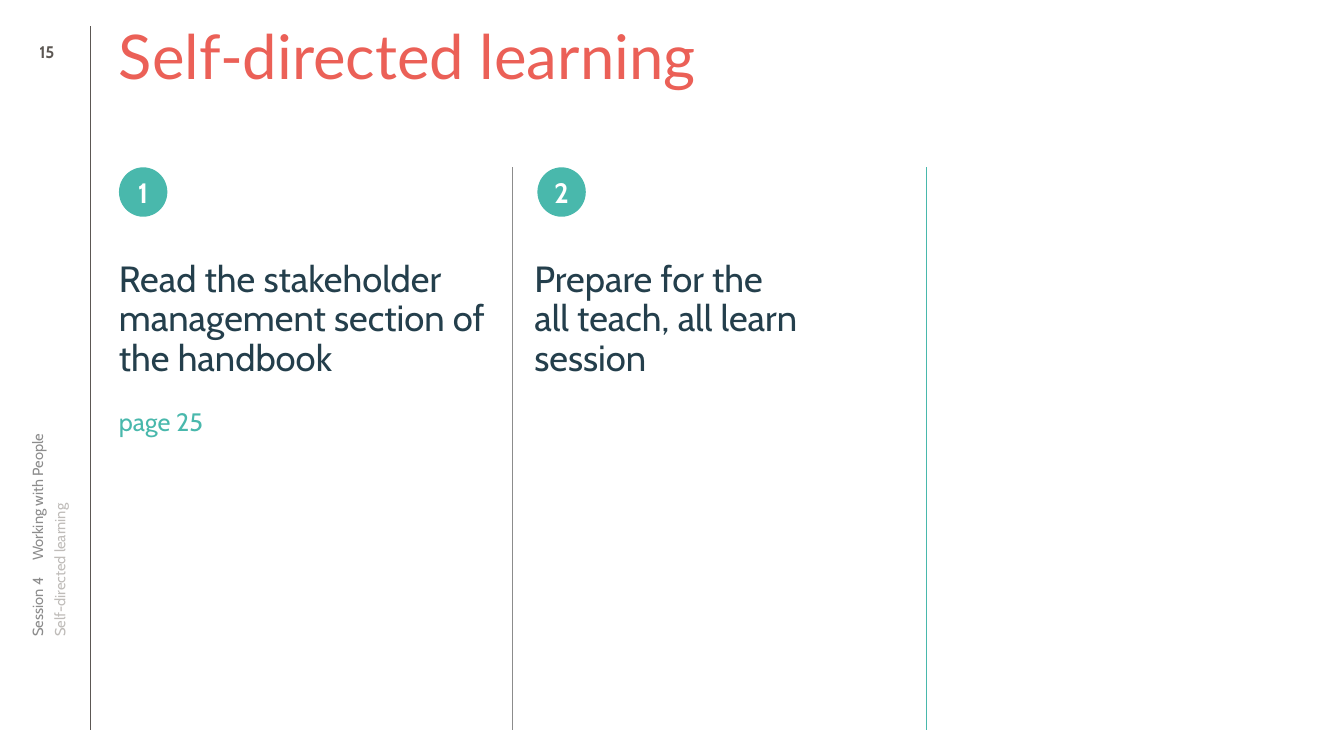
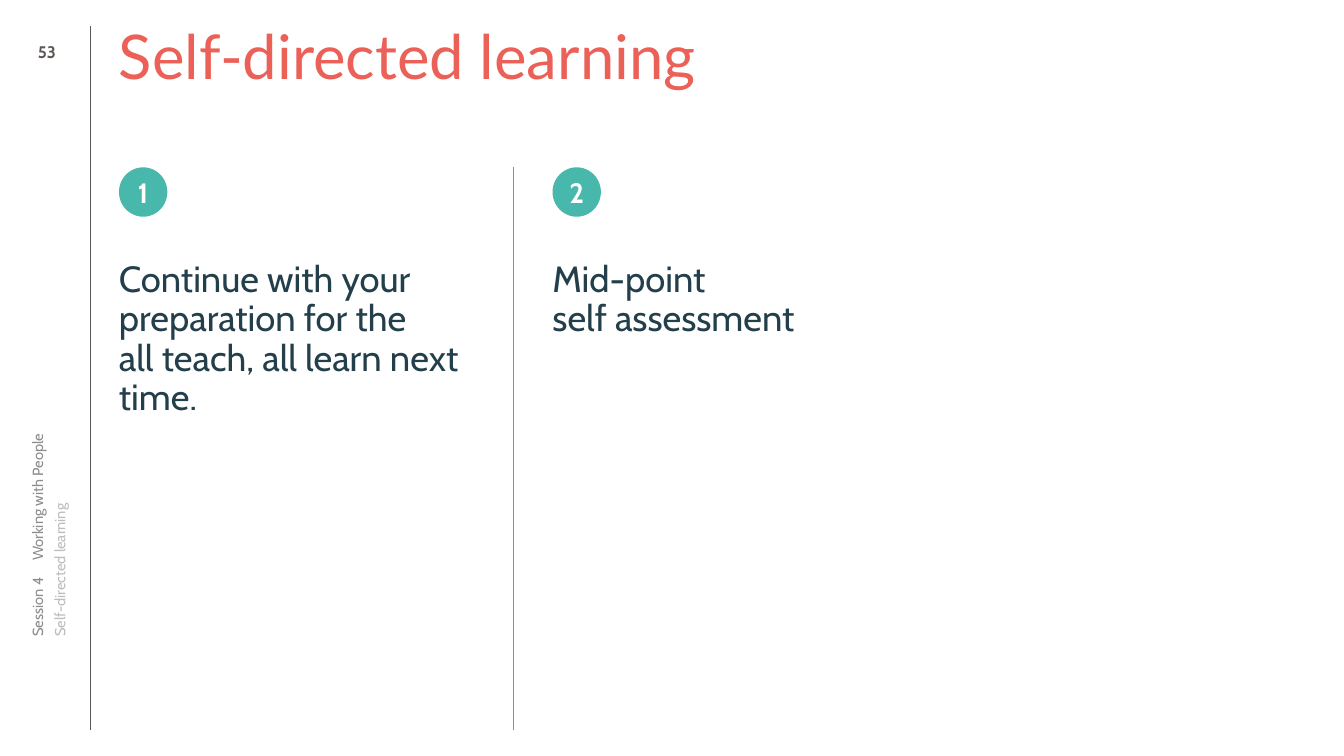
from lxml import etree
from pptx import Presentation
from pptx.dml.color import RGBColor
from pptx.enum.shapes import MSO_CONNECTOR, MSO_SHAPE
from pptx.enum.text import MSO_ANCHOR, PP_ALIGN
from pptx.oxml.ns import qn
from pptx.util import Inches, Pt

LINE, OVAL = MSO_CONNECTOR.STRAIGHT, MSO_SHAPE.OVAL
TOP, MID = MSO_ANCHOR.TOP, MSO_ANCHOR.MIDDLE
LEFT, MIDDLE = PP_ALIGN.LEFT, PP_ALIGN.CENTER

HUE = {"coral": "EB6057", "teal": "49B8AC", "navy": "243F4C", "dark": "5C5753",
       "grey": "8C8C8C", "pale": "BFBCB9", "white": "FFFFFF"}

# Grid: columns across, rows down, in inches
WIDE, HIGH = 13.33, 7.5
EDGE, RULE, COL = 0.26, 0.89, 1.18
HEAD, DOTS, BODY, FOOT = 0.26, 1.66, 2.59, HIGH - 0.26
SPAN, DEEP = 3.64, 4.24
SIDE = 4.65

TITLE = "Self-directed learning"
# Each step: left of dot, left of text, paragraphs of (lines, size, colour)
SLIDES = [
    {"page": "15",
     "rules": [(5.08, "grey", 0.25), (9.19, "teal", 1)],
     "steps": [
         (COL, COL, [(["Read the stakeholder management section of the handbook"], 26, "navy"),
                     (["page 25"], 18, "teal")]),
         (5.33, 5.3, [(["Prepare for the", "all teach, all learn session"], 26, "navy")])]},
    {"page": "53",
     "rules": [(5.09, "grey", 0.25)],
     "steps": [
         (COL, COL, [(["Continue with your preparation for the",
                       "all teach, all learn next time."], 26, "navy")]),
         (5.48, 5.48, [(["Mid-point", "self assessment"], 26, "navy")])]},
]


def write(shape, paras, font="Cabin", bold=False, align=LEFT, anchor=TOP, lead=0.9):
    """Fill a shape with paragraphs of (lines, size, colour), without insets."""
    frame = shape.text_frame
    frame.word_wrap = True
    frame.vertical_anchor = anchor
    frame.margin_left = frame.margin_right = frame.margin_top = frame.margin_bottom = 0
    for n, (lines, size, hue) in enumerate(paras):
        para = frame.add_paragraph() if n else frame.paragraphs[0]
        para.alignment, para.line_spacing = align, lead
        para.space_before = Pt(22 if n else 0)
        for k, words in enumerate(lines):
            if k:
                para.add_line_break()
            run = para.add_run()
            run.text = words
            run.font.name, run.font.size, run.font.bold = font, Pt(size), bold
            run.font.color.rgb = RGBColor.from_string(HUE[hue])


def rule(shapes, x, top, hue, width):
    """Draw a plain vertical line from top down to the foot of the grid."""
    line = shapes.add_connector(LINE, Inches(x), Inches(top), Inches(x), Inches(FOOT))
    line.line.color.rgb = RGBColor.from_string(HUE[hue])
    line.line.width = Pt(width)
    etree.SubElement(line._element.spPr, qn("a:effectLst"))


deck = Presentation()
deck.slide_width, deck.slide_height = Inches(WIDE), Inches(HIGH)

for data in SLIDES:
    slide = deck.slides.add_slide(deck.slide_layouts[5])
    shapes = slide.shapes

    rule(shapes, RULE, HEAD, "dark", 0.25)
    title = shapes.title
    title.left, title.top = Inches(COL), Inches(HEAD)
    title.width, title.height = Inches(WIDE - COL - EDGE), Inches(1.25)
    write(title, [([TITLE], 44, "coral")], font="Lato")

    page = shapes.add_textbox(Inches(EDGE), Inches(HEAD), Inches(0.41), Inches(0.51))
    write(page, [([data["page"]], 12, "dark")], bold=True, align=MIDDLE, anchor=MID, lead=1)

    # Side labels read upwards: place each by the middle of its turned box
    for mid, words, hue in [(0.37, "Session 4\tWorking with People", "grey"),
                            (0.59, TITLE, "pale")]:
        label = shapes.add_textbox(Inches(mid - SIDE / 2), Inches(3.89),
                                   Inches(SIDE), Inches(0.2))
        label.rotation = 270
        write(label, [([words], 10.5, hue)], anchor=MID, lead=1)
        if "\t" in words:
            props = label.text_frame.paragraphs[0]._p.get_or_add_pPr()
            tabs = etree.SubElement(props, qn("a:tabLst"))
            etree.SubElement(tabs, qn("a:tab"), pos=str(Inches(0.75)), algn="l")

    for n, (dot, left, paras) in enumerate(data["steps"], 1):
        disc = shapes.add_shape(OVAL, Inches(dot), Inches(DOTS), Inches(0.48), Inches(0.49))
        disc.shadow.inherit = False
        disc.fill.solid()
        disc.fill.fore_color.rgb = RGBColor.from_string(HUE["teal"])
        disc.line.fill.background()
        write(disc, [([str(n)], 20, "white")], bold=True, align=MIDDLE, anchor=MID, lead=1)
        text = shapes.add_textbox(Inches(left), Inches(BODY), Inches(SPAN), Inches(DEEP))
        write(text, paras)

    for x, hue, width in data["rules"]:
        rule(shapes, x, DOTS, hue, width)

deck.save("out.pptx")
